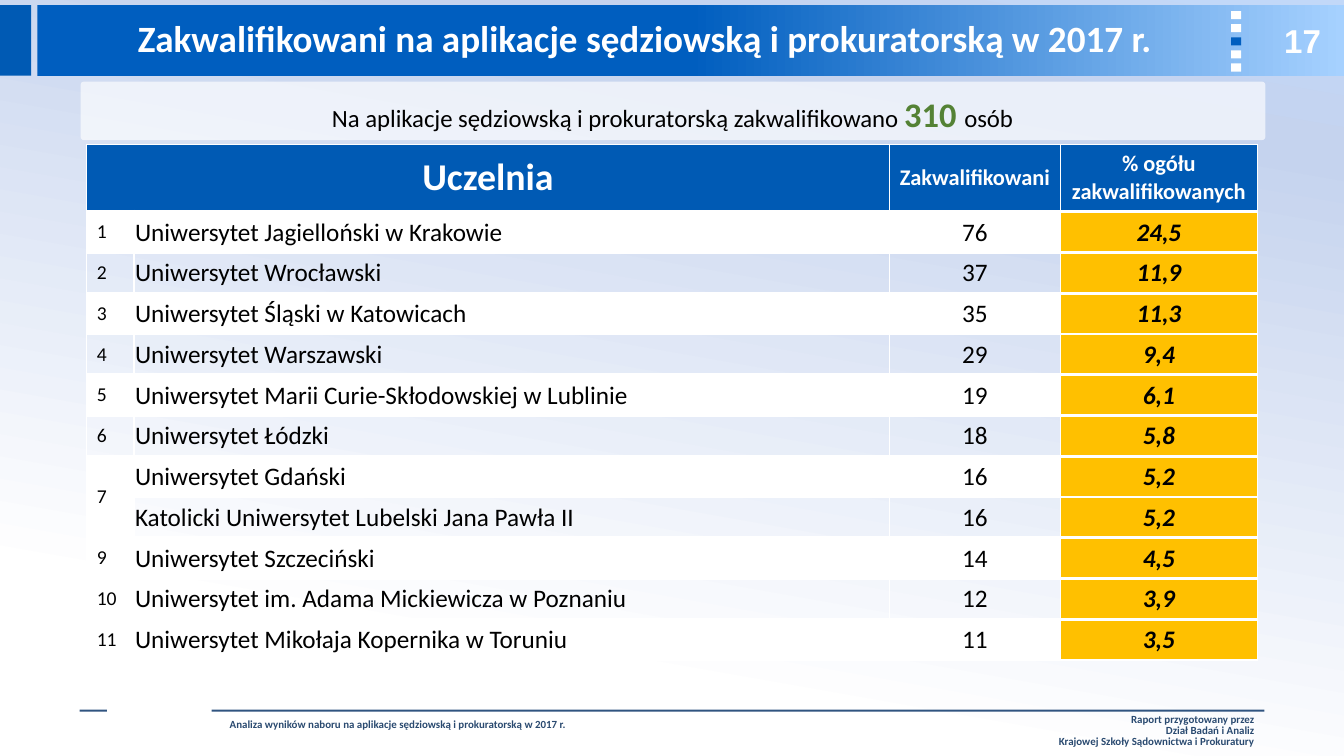
from collections import namedtuple

from lxml.etree import SubElement
from pptx import Presentation
from pptx.dml.color import RGBColor
from pptx.enum.shapes import MSO_SHAPE as Preset
from pptx.enum.text import MSO_ANCHOR as Anchor, MSO_AUTO_SIZE as AutoSize, PP_ALIGN as Align
from pptx.oxml.ns import qn
from pptx.util import Inches, Pt

WHITE = RGBColor(0xFF, 0xFF, 0xFF)
BLACK = RGBColor(0x00, 0x00, 0x00)
BLUE = RGBColor(0x00, 0x5A, 0xB4)
BRIGHT_BLUE = RGBColor(0x00, 0x5E, 0xBF)
SKY = RGBColor(0xA6, 0xD1, 0xFF)
MIST = RGBColor(0xC5, 0xD3, 0xEE)
PALE_BLUE = RGBColor(0xC2, 0xD8, 0xF8)
GREEN = RGBColor(0x54, 0x82, 0x35)
GOLD = RGBColor(0xFF, 0xC0, 0x00)
NAVY = RGBColor(0x2A, 0x4A, 0x70)
RULE_BLUE = RGBColor(0x30, 0x54, 0x80)

Box = namedtuple("Box", "left top width height")

COLUMN_WIDTHS = [0.47, 7.49, 1.7, 1.95]
HEADER_HEIGHT = 0.67
UNIVERSITIES = [
    ("1", "Uniwersytet Jagielloński w Krakowie", "76", "24,5"),
    ("2", "Uniwersytet Wrocławski", "37", "11,9"),
    ("3", "Uniwersytet Śląski w Katowicach", "35", "11,3"),
    ("4", "Uniwersytet Warszawski", "29", "9,4"),
    ("5", "Uniwersytet Marii Curie-Skłodowskiej w Lublinie", "19", "6,1"),
    ("6", "Uniwersytet Łódzki", "18", "5,8"),
    ("7", "Uniwersytet Gdański", "16", "5,2"),
    ("", "Katolicki Uniwersytet Lubelski Jana Pawła II", "16", "5,2"),
    ("9", "Uniwersytet Szczeciński", "14", "4,5"),
    ("10", "Uniwersytet im. Adama Mickiewicza w Poznaniu", "12", "3,9"),
    ("11", "Uniwersytet Mikołaja Kopernika w Toruniu", "11", "3,5"),
]


def lengths(box):
    return [Inches(value) for value in box]


def add_span(para, text, size, color=BLACK, bold=False, italic=False, font="Calibri"):
    span = para.add_run()
    span.text = text
    span.font.name = font
    span.font.size = Pt(size)
    span.font.bold = bold
    span.font.italic = italic
    span.font.color.rgb = color


def add_block(shapes, box, preset=Preset.RECTANGLE, color=None, opacity=100):
    block = shapes.add_shape(preset, *lengths(box))
    block.shadow.inherit = False
    block.line.fill.background()
    if color is not None:
        block.fill.solid()
        block.fill.fore_color.rgb = color
        if opacity < 100:
            tint = block.fill._xPr.find(".//" + qn("a:srgbClr"))
            SubElement(tint, qn("a:alpha"), val=str(opacity * 1000))
    return block


def fill_gradient(block, stops, clockwise_angle):
    block.fill.gradient()
    block.fill.gradient_angle = (360 - clockwise_angle) % 360
    stop_list = block.fill._xPr.find(".//" + qn("a:gsLst"))
    for stop in list(stop_list):
        stop_list.remove(stop)
    for position, color in stops:
        stop = SubElement(stop_list, qn("a:gs"), pos=str(position * 1000))
        SubElement(stop, qn("a:srgbClr"), val=str(color))


def add_text_frame(shapes, box, wrap=True, anchor=Anchor.TOP):
    frame = shapes.add_textbox(*lengths(box)).text_frame
    frame.word_wrap = wrap
    frame.vertical_anchor = anchor
    return frame


def add_backdrop(page, box):
    backdrop = add_block(page.shapes, box)
    fill_gradient(backdrop, [(19, WHITE), (84, MIST), (100, PALE_BLUE)], 280)


def add_header(page, box):
    band = add_block(page.shapes, Box(box.left + 0.37, box.top, box.width - 0.37, box.height))
    fill_gradient(band, [(50, BRIGHT_BLUE), (100, SKY)], 0)
    add_block(page.shapes, Box(box.left, box.top, 0.31, box.height), color=BLUE)
    for index in range(5):
        dot = Box(box.left + 12.21, box.top + 0.06 + 0.13 * index, 0.1, 0.08)
        add_block(page.shapes, dot, color=BRIGHT_BLUE if index == 2 else WHITE)

    number_box = Box(box.left + 12.62, box.top + 0.1, 0.6, 0.5)
    para = add_text_frame(page.shapes, number_box, wrap=False, anchor=Anchor.MIDDLE).paragraphs[0]
    para.alignment = Align.CENTER
    add_span(para, "17", 23.6, WHITE, bold=True, font="Arial")

    title = page.shapes.title
    title.left, title.top, title.width, title.height = lengths(
        Box(box.left + 1.18, box.top + 0.14, 10.44, 0.47))
    title.element.getparent().append(title.element)
    title.text_frame.auto_size = AutoSize.NONE
    title.text_frame.word_wrap = True
    title.text_frame.vertical_anchor = Anchor.TOP
    para = title.text_frame.paragraphs[0]
    para.alignment = Align.CENTER
    para.line_spacing = 0.8
    properties = para._p.get_or_add_pPr()
    properties.set("marL", str(Inches(0.67)))
    properties.set("indent", str(Inches(-0.67)))
    add_span(para, "Zakwalifikowani na aplikacje sędziowską i prokuratorską w 2017 r.",
             26.5, WHITE, bold=True)


def add_summary(page, box):
    panel = add_block(page.shapes, box, Preset.ROUNDED_RECTANGLE, WHITE, 65)
    panel.adjustments[0] = 0.053
    text_box = Box(box.left + 0.21, box.top, box.width - 0.43, box.height)
    para = add_text_frame(page.shapes, text_box).paragraphs[0]
    para.alignment = Align.CENTER
    para.line_spacing = 1.15
    para.space_after = Pt(10)
    add_span(para, "Na aplikacje sędziowską i prokuratorską zakwalifikowano ", 17.7)
    add_span(para, "310 ", 24.6, GREEN, bold=True)
    add_span(para, "osób", 17.7)


def format_cell(cell, fill, top, bottom, tight=False, align=Align.LEFT):
    properties = cell._tc.get_or_add_tcPr()
    for side, width in (("L", 1), ("R", 1), ("T", top), ("B", bottom)):
        line = SubElement(properties, qn("a:ln" + side), w=str(Pt(width)))
        SubElement(SubElement(line, qn("a:solidFill")), qn("a:srgbClr"), val=str(WHITE))
    if fill is None:
        cell.fill.background()
    else:
        cell.fill.solid()
        cell.fill.fore_color.rgb = fill
    cell.vertical_anchor = Anchor.MIDDLE
    cell.margin_left = cell.margin_right = Inches(0.01 if tight else 0.1)
    cell.margin_top = Inches(0.01 if tight else 0.05)
    cell.margin_bottom = Inches(0 if tight else 0.05)
    cell.text_frame.paragraphs[0].alignment = align
    return cell.text_frame.paragraphs[0]


def add_ranking(page, box):
    table = page.shapes.add_table(len(UNIVERSITIES) + 1, 4, *lengths(box)).table
    table.first_row = table.horz_banding = False
    for column, width in zip(table.columns, COLUMN_WIDTHS):
        column.width = Inches(width)
    for row in table.rows:
        row.height = Inches((box.height - HEADER_HEIGHT) / len(UNIVERSITIES))
    table.rows[0].height = Inches(HEADER_HEIGHT)
    table.cell(0, 0).merge(table.cell(0, 1))
    table.cell(7, 0).merge(table.cell(8, 0))

    headings = [("Uczelnia", 27), ("", 16), ("Zakwalifikowani", 16),
                ("% ogółu zakwalifikowanych", 16)]
    for index, (heading, size) in enumerate(headings):
        para = format_cell(table.cell(0, index), BLUE, 1, 3, align=Align.CENTER)
        if heading:
            add_span(para, heading, size, WHITE, bold=True)

    for number, record in enumerate(UNIVERSITIES, 1):
        band = WHITE if number % 2 else None
        for index, text in enumerate(record):
            is_share = index == 3
            para = format_cell(table.cell(number, index), GOLD if is_share else band,
                               3 if number == 1 else 2.25, 2.25, tight=index > 0,
                               align=Align.CENTER if index > 1 else Align.LEFT)
            if text:
                add_span(para, text, 18 if index else 14, bold=is_share, italic=is_share)


def add_footer(page, box):
    shapes = page.shapes.add_group_shape().shapes
    add_block(shapes, Box(box.left + 0.33, box.top, 0.91, 0.87), Preset.OVAL, WHITE, 75)
    rule_top = box.top + 0.47
    report = add_text_frame(shapes, Box(box.left + 1.39, rule_top + 0.03, 3.58, 0.23), wrap=False)
    add_span(report.paragraphs[0],
             "Analiza wyników naboru na aplikacje sędziowską i prokuratorską w 2017 r.",
             7.8, NAVY, bold=True)
    authors = add_text_frame(shapes, Box(box.left + box.width - 2.18, rule_top, 2.18, 0.44), wrap=False)
    lines = ["Raport przygotowany przez", "Dział Badań i Analiz",
             "Krajowej Szkoły Sądownictwa i Prokuratury"]
    for index, line in enumerate(lines):
        para = authors.add_paragraph() if index else authors.paragraphs[0]
        para.alignment = Align.RIGHT
        para.line_spacing = 0.85
        add_span(para, line, 7.8, NAVY, bold=True)
    for offset, width in ((1.31, box.width - 1.31), (0, 0.27)):
        add_block(shapes, Box(box.left + offset, rule_top, width, 0.02), color=RULE_BLUE)


def main():
    deck = Presentation()
    deck.slide_width, deck.slide_height = Inches(13.33), Inches(7.5)
    page = deck.slides.add_slide(deck.slide_layouts[5])
    add_backdrop(page, Box(0, 0, 13.33, 7.5))
    add_header(page, Box(0, 0.05, 13.33, 0.7))
    add_summary(page, Box(0.8, 0.81, 11.75, 0.58))
    add_ranking(page, Box(0.86, 1.43, 11.61, 5.12))
    add_footer(page, Box(0.79, 6.57, 11.75, 0.91))
    deck.save("out.pptx")


if __name__ == "__main__":
    main()
